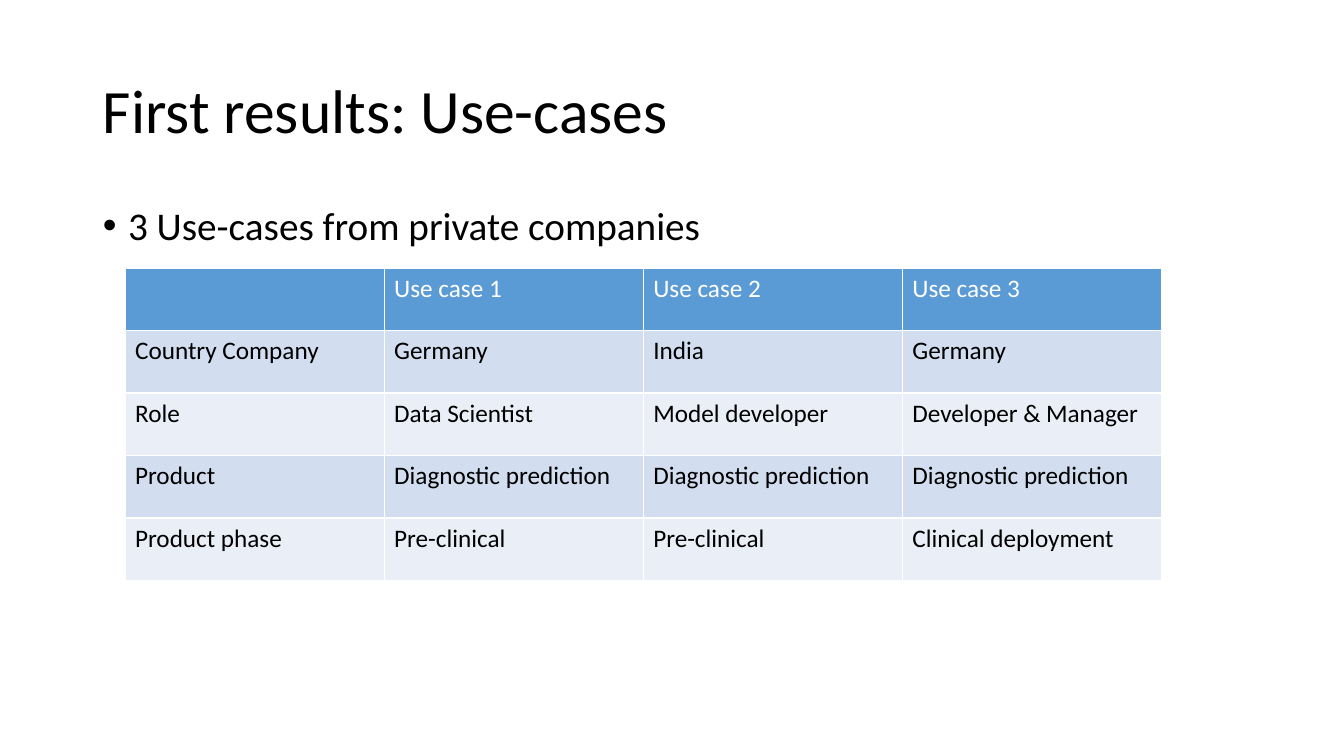
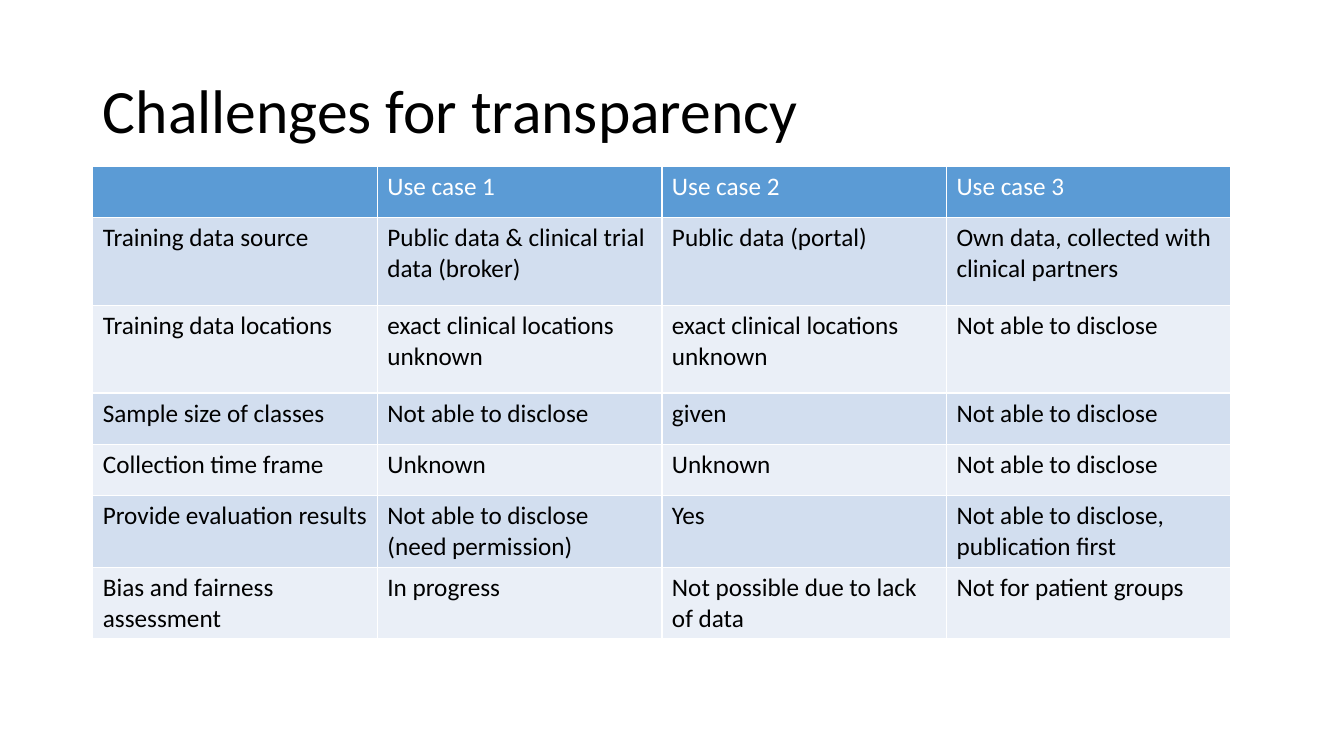
from pptx import Presentation
from pptx.dml.color import RGBColor
from pptx.enum import text
from pptx.oxml import parse_xml
from pptx.oxml.ns import nsdecls
from pptx.util import Inches, Pt

FONT = "Calibri"
COLORS = {
    "text": "000000",
    "header": "5B9BD5",
    "header_text": "FFFFFF",
    "odd_band": "D2DEEF",
    "even_band": "EAEFF7",
    "border": "FFFFFF",
}
TITLE_AND_BODY, TITLE_ONLY = 1, 5
HEADER = ["", "Use case 1", "Use case 2", "Use case 3"]

USE_CASES = [
    HEADER,
    ["Country Company", "Germany", "India", "Germany"],
    ["Role", "Data Scientist", "Model developer", "Developer & Manager"],
    ["Product"] + ["Diagnostic prediction"] * 3,
    ["Product phase", "Pre-clinical", "Pre-clinical", "Clinical deployment"],
]
CHALLENGES = [
    HEADER,
    ["Training data source", "Public data & clinical trial data (broker)",
     "Public data (portal)", "Own data, collected with clinical partners"],
    ["Training data locations", "exact clinical locations unknown",
     "exact clinical locations unknown", "Not able to disclose"],
    ["Sample size of classes", "Not able to disclose", "given", "Not able to disclose"],
    ["Collection time frame", "Unknown", "Unknown", "Not able to disclose"],
    ["Provide evaluation results", "Not able to disclose (need permission)",
     "Yes", "Not able to disclose, publication first"],
    ["Bias and fairness assessment", "In progress",
     "Not possible due to lack of data", "Not for patient groups"],
]


def style_paragraph(paragraph, size, color="text"):
    paragraph.alignment = text.PP_ALIGN.LEFT
    paragraph.font.name = FONT
    paragraph.font.size = Pt(size)
    paragraph.font.color.rgb = RGBColor.from_string(COLORS[color])


def fill_placeholder(placeholder, words, box, size):
    placeholder.left, placeholder.top, placeholder.width, placeholder.height = map(Inches, box)
    placeholder.text_frame.text = words
    paragraph = placeholder.text_frame.paragraphs[0]
    style_paragraph(paragraph, size)
    paragraph.line_spacing = 0.9
    return paragraph


def add_titled_slide(presentation, layout, title, width=11.5):
    slide = presentation.slides.add_slide(presentation.slide_layouts[layout])
    fill_placeholder(slide.shapes.title, title, (0.92, 0.4, width, 1.45), 44)
    slide.shapes.title.text_frame.vertical_anchor = text.MSO_ANCHOR.MIDDLE
    return slide


def add_bullet(slide, words, box):
    paragraph = fill_placeholder(slide.placeholders[1], words, box, 28)
    paragraph.space_before = Pt(10)
    properties = paragraph._p.get_or_add_pPr()
    properties.set("marL", str(Inches(0.25)))
    properties.set("indent", str(-Inches(0.25)))


def set_borders(cell):
    properties = cell._tc.get_or_add_tcPr()
    for index, side in enumerate(("lnL", "lnR", "lnT", "lnB")):
        properties.insert(index, parse_xml(
            f'<a:{side} {nsdecls("a")} w="{Pt(1)}"><a:solidFill>'
            f'<a:srgbClr val="{COLORS["border"]}"/></a:solidFill></a:{side}>'))


def add_banded_table(slide, rows, left, top, width, heights):
    frame = slide.shapes.add_table(
        len(rows), len(rows[0]), Inches(left), Inches(top),
        Inches(width), Inches(sum(heights)))
    table = frame.table
    table.first_row = table.horz_banding = False
    for row_index, (values, height) in enumerate(zip(rows, heights)):
        table.rows[row_index].height = Inches(height)
        if row_index == 0:
            fill, color = "header", "header_text"
        else:
            fill, color = ("odd_band" if row_index % 2 else "even_band"), "text"
        for cell, value in zip(table.rows[row_index].cells, values):
            cell.text = value
            cell.fill.solid()
            cell.fill.fore_color.rgb = RGBColor.from_string(COLORS[fill])
            set_borders(cell)
            style_paragraph(cell.text_frame.paragraphs[0], 18, color)


def add_use_cases_slide(presentation):
    slide = add_titled_slide(presentation, TITLE_AND_BODY, "First results: Use-cases")
    add_bullet(slide, "3 Use-cases from private companies", (0.92, 2, 11.5, 4.18))
    add_banded_table(slide, USE_CASES, 1.24, 2.66, 10.28, [0.62] * 5)


def add_challenges_slide(presentation):
    slide = add_titled_slide(presentation, TITLE_ONLY, "Challenges for transparency", 12.22)
    heights = [0.51, 0.87, 0.87, 0.51, 0.51, 0.7, 0.7]
    add_banded_table(slide, CHALLENGES, 0.92, 1.65, 11.29, heights)


def main():
    presentation = Presentation()
    presentation.slide_width, presentation.slide_height = Inches(13.33), Inches(7.5)
    add_use_cases_slide(presentation)
    add_challenges_slide(presentation)
    presentation.save("out.pptx")


if __name__ == "__main__":
    main()
